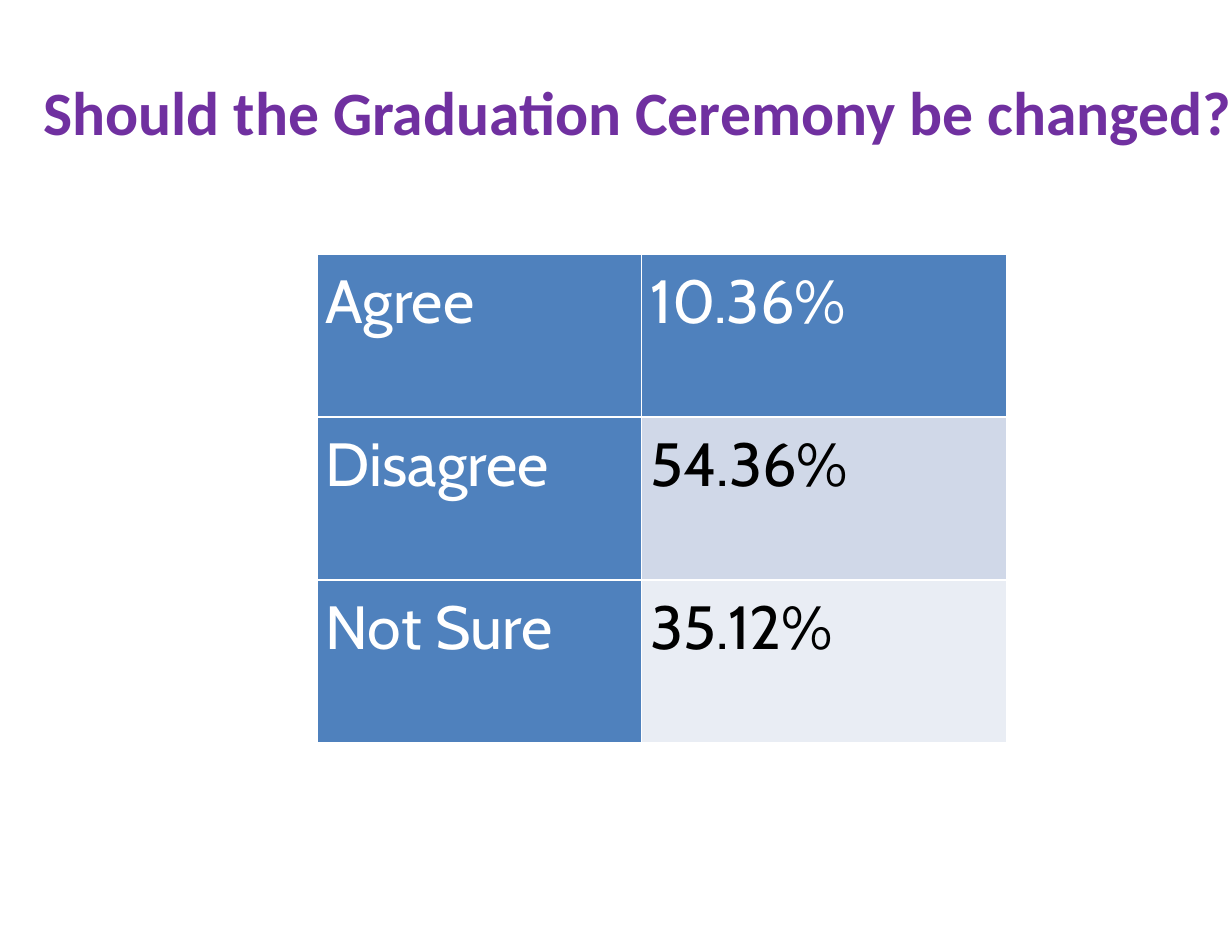
import pptx
import pptx.dml.color
import pptx.enum.text
import pptx.oxml
import pptx.oxml.ns
import pptx.util

SLIDE_WIDTH = pptx.util.Inches(9.83)
SLIDE_HEIGHT = pptx.util.Inches(7.47)
PURPLE, BLUE, WHITE, BLACK = "7030A0", "4F81BD", "FFFFFF", "000000"
BANDS = ["D0D8E8", "E9EDF4"]
RESULTS = [("Agree", "10.36%"), ("Disagree", "54.36%"), ("Not Sure", "35.12%")]
COLUMN_WIDTHS = [2.59, 2.91]
ROW_HEIGHT = 1.3


def color(hex_string):
    return pptx.dml.color.RGBColor.from_string(hex_string)


def format_text(paragraph, font_name, size, hex_string, alignment, bold=False):
    paragraph.alignment = alignment
    for run in paragraph.runs:
        run.font.name = font_name
        run.font.size = pptx.util.Pt(size)
        run.font.bold = bold
        run.font.color.rgb = color(hex_string)


def set_title(slide, text):
    title = slide.shapes.title
    title.left, title.top = int(SLIDE_WIDTH * 0.02), int(SLIDE_HEIGHT * 0.072)
    title.width, title.height = int(SLIDE_WIDTH * 0.995), int(SLIDE_HEIGHT * 0.094)
    text_frame = title.text_frame
    text_frame.text = text
    text_frame.word_wrap = False
    text_frame.auto_size = pptx.enum.text.MSO_AUTO_SIZE.NONE
    text_frame.vertical_anchor = pptx.enum.text.MSO_ANCHOR.TOP
    format_text(text_frame.paragraphs[0], "Calibri", 35.4, PURPLE,
                pptx.enum.text.PP_ALIGN.CENTER, bold=True)


def add_borders(cell, hex_string, points):
    properties = cell._tc.get_or_add_tcPr()
    for side in ("lnL", "lnR", "lnT", "lnB"):
        properties.append(pptx.oxml.parse_xml(
            f'<a:{side} {pptx.oxml.ns.nsdecls("a")} w="{pptx.util.Pt(points)}">'
            f'<a:solidFill><a:srgbClr val="{hex_string}"/></a:solidFill></a:{side}>'))


def format_cell(cell, text, fill, text_color):
    add_borders(cell, WHITE, 1)
    cell.fill.solid()
    cell.fill.fore_color.rgb = color(fill)
    cell.margin_left = cell.margin_right = pptx.util.Inches(0.07)
    cell.margin_top = cell.margin_bottom = pptx.util.Inches(0.04)
    cell.text_frame.text = text
    paragraph = cell.text_frame.paragraphs[0]
    paragraph.line_spacing = 1.07
    format_text(paragraph, "Cabin", 35, text_color, pptx.enum.text.PP_ALIGN.JUSTIFY)


def add_results_table(slide, results):
    table = slide.shapes.add_table(
        len(results), len(COLUMN_WIDTHS),
        pptx.util.Inches(2.53), pptx.util.Inches(2.03),
        pptx.util.Inches(sum(COLUMN_WIDTHS)),
        pptx.util.Inches(ROW_HEIGHT * len(results))).table
    for column, width in zip(table.columns, COLUMN_WIDTHS):
        column.width = pptx.util.Inches(width)
    for row_index, values in enumerate(results):
        table.rows[row_index].height = pptx.util.Inches(ROW_HEIGHT)
        for column_index, text in enumerate(values):
            is_heading = row_index == 0 or column_index == 0
            fill = BLUE if is_heading else BANDS[(row_index - 1) % len(BANDS)]
            format_cell(table.cell(row_index, column_index), text, fill,
                        WHITE if is_heading else BLACK)


def main():
    presentation = pptx.Presentation()
    presentation.slide_width = SLIDE_WIDTH
    presentation.slide_height = SLIDE_HEIGHT
    slide = presentation.slides.add_slide(
        presentation.slide_layouts.get_by_name("Title Only"))
    slide.background.fill.solid()
    slide.background.fill.fore_color.rgb = color(WHITE)
    set_title(slide, "Should the Graduation Ceremony be changed?")
    add_results_table(slide, RESULTS)
    presentation.save("out.pptx")


if __name__ == "__main__":
    main()
